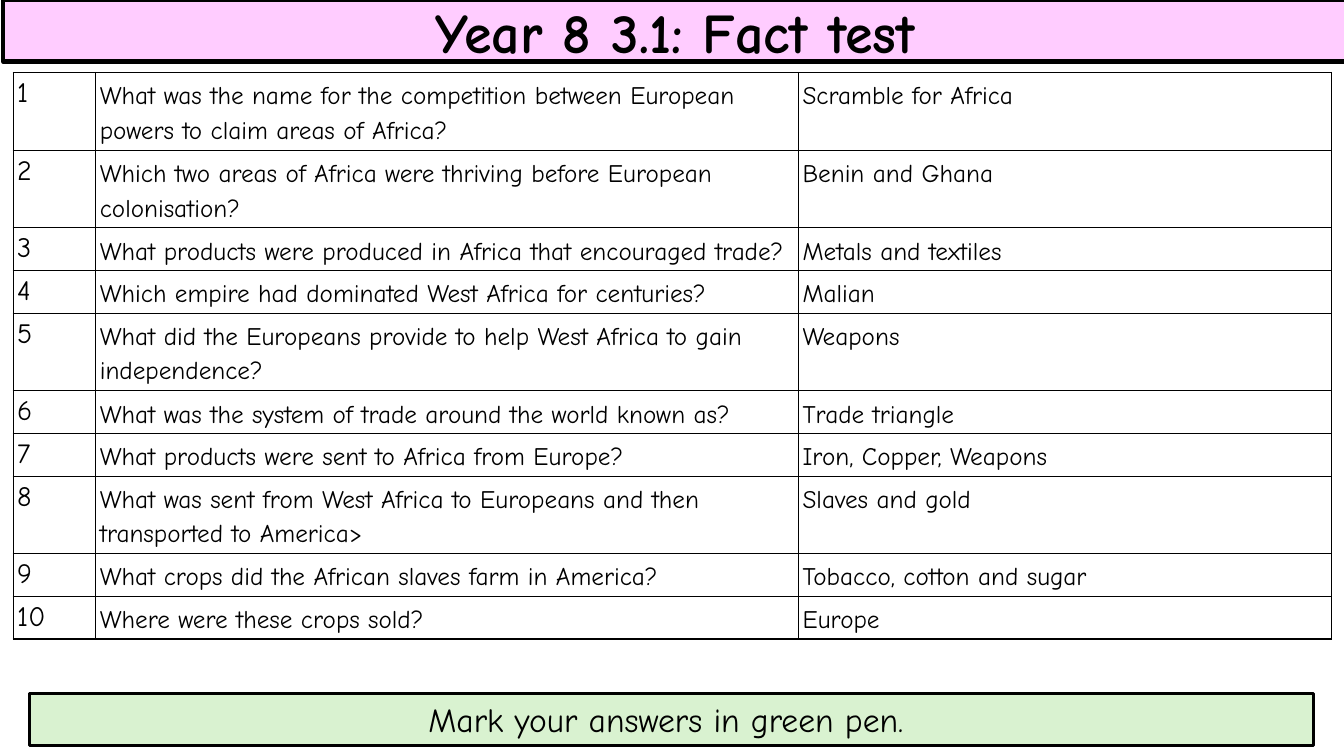
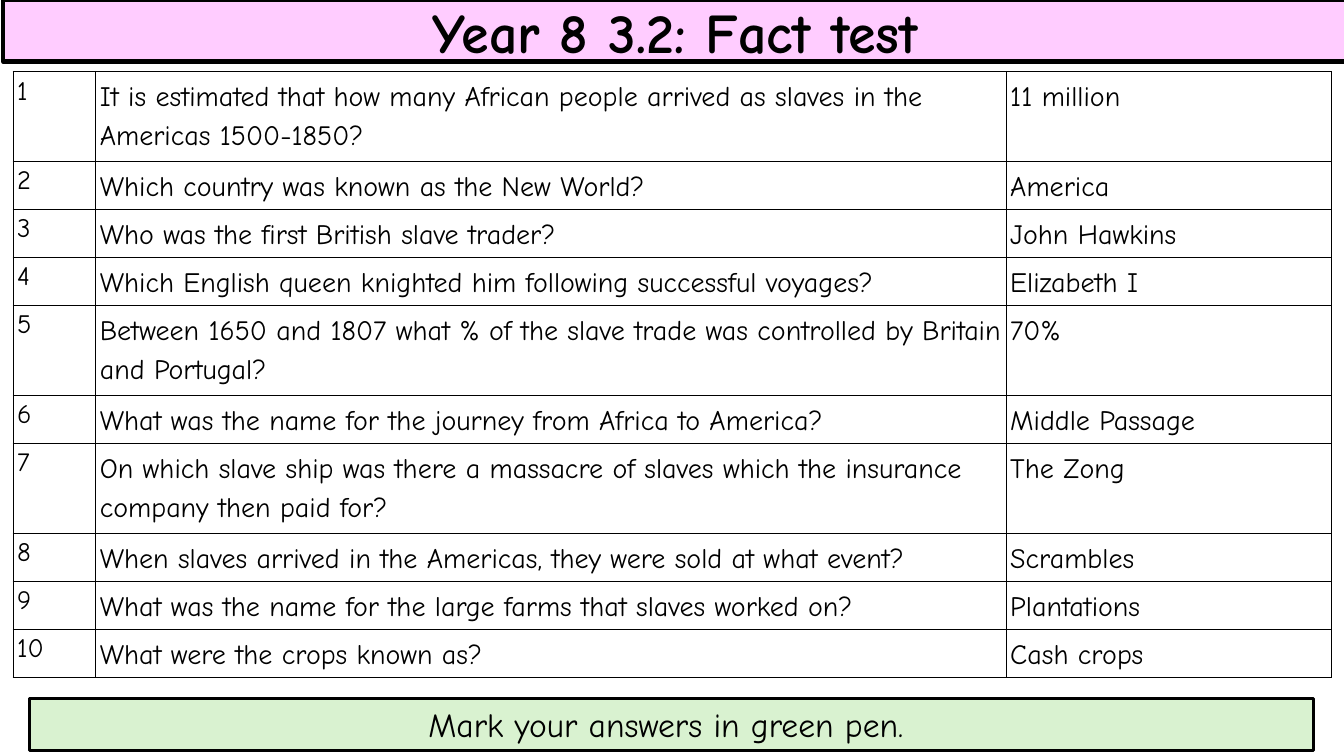
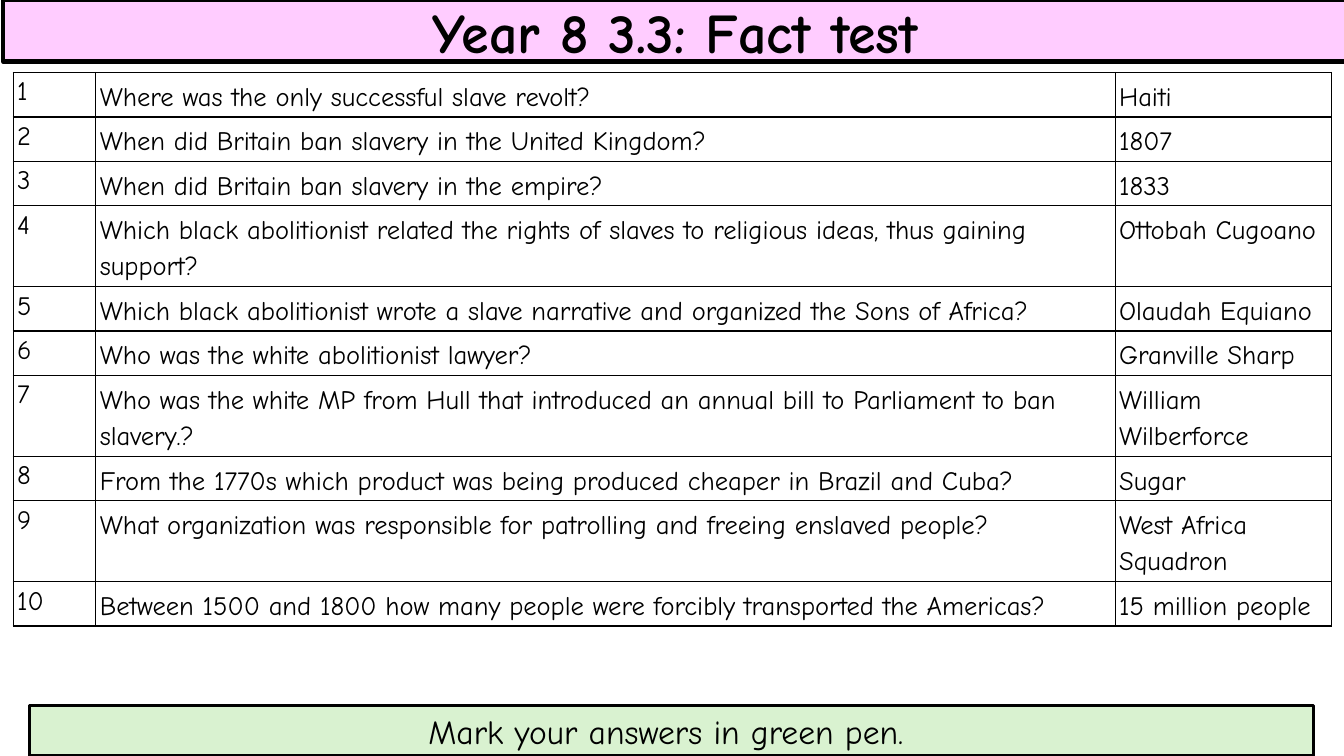
"""Build three history fact tests, each with a title, a table of answers and a marking reminder."""
from dataclasses import dataclass

from lxml import etree
from pptx import Presentation
from pptx import util as u
from pptx.dml.color import RGBColor
from pptx.enum import shapes, text
from pptx.oxml import ns

BLACK = RGBColor(0x00, 0x00, 0x00)
WHITE = RGBColor(0xFF, 0xFF, 0xFF)
PINK = RGBColor(0xFF, 0xCC, 0xFF)
GREEN = RGBColor(0xD9, 0xF2, 0xD0)
FONT = "Comic Neue"


@dataclass
class FactTest:
    title: str
    table_top: float
    question_width: float
    row_height: float
    tall_row_height: float
    tall_rows: tuple
    number_size: int
    text_size: int
    footer_top: float
    footer_height: float
    facts: list


TESTS = [
    FactTest(
        title="Year 8 3.1: Fact test",
        table_top=9.6, question_width=52.29,
        row_height=5.6, tall_row_height=10.27, tall_rows=(1, 2, 5, 8),
        number_size=20, text_size=18,
        footer_top=91.73, footer_height=6.93,
        facts=[
            ("What was the name for the competition between European powers to claim areas of Africa?",
             "Scramble for Africa"),
            ("Which two areas of Africa were thriving before European colonisation?", "Benin and Ghana"),
            ("What products were produced in Africa that encouraged trade?", "Metals and textiles"),
            ("Which empire had dominated West Africa for centuries?", "Malian"),
            ("What did the Europeans provide to help West Africa to gain independence?", "Weapons"),
            ("What was the system of trade around the world known as?", "Trade triangle"),
            ("What products were sent to Africa from Europe?", "Iron, Copper, Weapons"),
            ("What was sent from West Africa to Europeans and then transported to America>",
             "Slaves and gold"),
            ("What crops did the African slaves farm in America?", "Tobacco, cotton and sugar"),
            ("Where were these crops sold?", "Europe"),
        ],
    ),
    FactTest(
        title="Year 8 3.2: Fact test",
        table_top=9.47, question_width=67.74,
        row_height=6.35, tall_row_height=11.9, tall_rows=(1, 5, 7),
        number_size=19, text_size=20,
        footer_top=92.4, footer_height=6.93,
        facts=[
            ("It is estimated that how many African people arrived as slaves in the Americas 1500-1850?",
             "11 million"),
            ("Which country was known as the New World?", "America"),
            ("Who was the first British slave trader?", "John Hawkins"),
            ("Which English queen knighted him following successful voyages?", "Elizabeth I"),
            ("Between 1650 and 1807 what % of the slave trade was controlled by Britain and Portugal?",
             "70%"),
            ("What was the name for the journey from Africa to America?", "Middle Passage"),
            ("On which slave ship was there a massacre of slaves which the insurance company then paid for?",
             "The Zong"),
            ("When slaves arrived in the Americas, they were sold at what event?", "Scrambles"),
            ("What was the name for the large farms that slaves worked on?", "Plantations"),
            ("What were the crops known as?", "Cash crops"),
        ],
    ),
    FactTest(
        title="Year 8 3.3: Fact test",
        table_top=9.6, question_width=75.84,
        row_height=5.87, tall_row_height=10.7, tall_rows=(4, 7, 9),
        number_size=19, text_size=19,
        footer_top=93.33, footer_height=6.67,
        facts=[
            ("Where was the only successful slave revolt?", "Haiti"),
            ("When did Britain ban slavery in the United Kingdom?", "1807"),
            ("When did Britain ban slavery in the empire?", "1833"),
            ("Which black abolitionist related the rights of slaves to religious ideas, thus gaining support?",
             "Ottobah Cugoano"),
            ("Which black abolitionist wrote a slave narrative and organized the Sons of Africa?",
             "Olaudah Equiano"),
            ("Who was the white abolitionist lawyer?", "Granville Sharp"),
            ("Who was the white MP from Hull that introduced an annual bill to Parliament to ban slavery.?",
             "William Wilberforce"),
            ("From the 1770s which product was being produced cheaper in Brazil and Cuba?", "Sugar"),
            ("What organization was responsible for patrolling and freeing enslaved people?",
             "West Africa Squadron"),
            ("Between 1500 and 1800 how many people were forcibly transported the Americas?",
             "15 million people"),
        ],
    ),
]


def write(frame, wording, size, bold=False, align=None, line_spacing=None, space_after=None):
    paragraph = frame.paragraphs[0]
    paragraph.alignment = align
    paragraph.line_spacing = line_spacing
    if space_after is not None:
        paragraph.space_after = u.Pt(space_after)
    run = paragraph.add_run()
    run.text = wording
    run.font.name = FONT
    run.font.size = u.Pt(size)
    run.font.bold = bold
    run.font.color.rgb = BLACK


class Deck:
    TABLE_LEFT = 0.98
    TABLE_WIDTH = 98.12
    NUMBER_WIDTH = 6.15

    def __init__(self):
        self.presentation = Presentation()
        self.presentation.slide_width = u.Inches(13.33)
        self.presentation.slide_height = u.Inches(7.5)
        self.slide = None

    def across(self, percent):
        return u.Emu(round(self.presentation.slide_width * percent / 100))

    def down(self, percent):
        return u.Emu(round(self.presentation.slide_height * percent / 100))

    def new_slide(self):
        self.slide = self.presentation.slides.add_slide(self.presentation.slide_layouts[6])

    def band(self, wording, left, top, width, height, fill, line_width, anchor, **style):
        shape = self.slide.shapes.add_shape(
            shapes.MSO_SHAPE.RECTANGLE,
            self.across(left), self.down(top), self.across(width), self.down(height))
        shape.shadow.inherit = False
        shape.fill.solid()
        shape.fill.fore_color.rgb = fill
        shape.line.color.rgb = BLACK
        shape.line.width = u.Pt(line_width)
        shape.text_frame.vertical_anchor = anchor
        write(shape.text_frame, wording, align=text.PP_ALIGN.CENTER, **style)

    def title(self, wording):
        self.band(wording, 0.23, 0, 100, 8.13, PINK, 3, text.MSO_ANCHOR.MIDDLE, size=40, bold=True)

    def footer(self, top, height):
        self.band("Mark your answers in green pen. ", 2.18, top, 95.57, height, GREEN, 2.25,
                  text.MSO_ANCHOR.TOP, size=24)

    def cell(self, cell, wording, margin, **style):
        cell.margin_left = cell.margin_right = u.Inches(0.04)
        cell.margin_top = cell.margin_bottom = u.Inches(margin)
        properties = cell._tc.get_or_add_tcPr()
        for side in ("a:lnL", "a:lnR", "a:lnT", "a:lnB"):
            line = etree.SubElement(properties, ns.qn(side), w=str(u.Pt(1)))
            fill = etree.SubElement(line, ns.qn("a:solidFill"))
            etree.SubElement(fill, ns.qn("a:srgbClr"), val=str(BLACK))
        cell.fill.solid()
        cell.fill.fore_color.rgb = WHITE
        write(cell.text_frame, wording, **style)

    def fact_table(self, test):
        heights = [test.tall_row_height if number in test.tall_rows else test.row_height
                   for number in range(1, len(test.facts) + 1)]
        answer_width = self.TABLE_WIDTH - self.NUMBER_WIDTH - test.question_width
        table = self.slide.shapes.add_table(
            len(heights), 3, self.across(self.TABLE_LEFT), self.down(test.table_top),
            self.across(self.TABLE_WIDTH), self.down(sum(heights))).table
        table.first_row = table.horz_banding = False
        for column, width in zip(table.columns, (self.NUMBER_WIDTH, test.question_width, answer_width)):
            column.width = self.across(width)
        for index, (height, fact) in enumerate(zip(heights, test.facts)):
            table.rows[index].height = self.down(height)
            self.cell(table.cell(index, 0), str(index + 1), 0,
                      size=test.number_size, line_spacing=1.15, space_after=10)
            for column, wording in enumerate(fact, 1):
                self.cell(table.cell(index, column), wording, 0.04,
                          size=test.text_size, line_spacing=1.19, space_after=6)


def main():
    deck = Deck()
    for test in TESTS:
        deck.new_slide()
        deck.fact_table(test)
        deck.title(test.title)
        deck.footer(test.footer_top, test.footer_height)
    deck.presentation.save("out.pptx")


if __name__ == "__main__":
    main()
